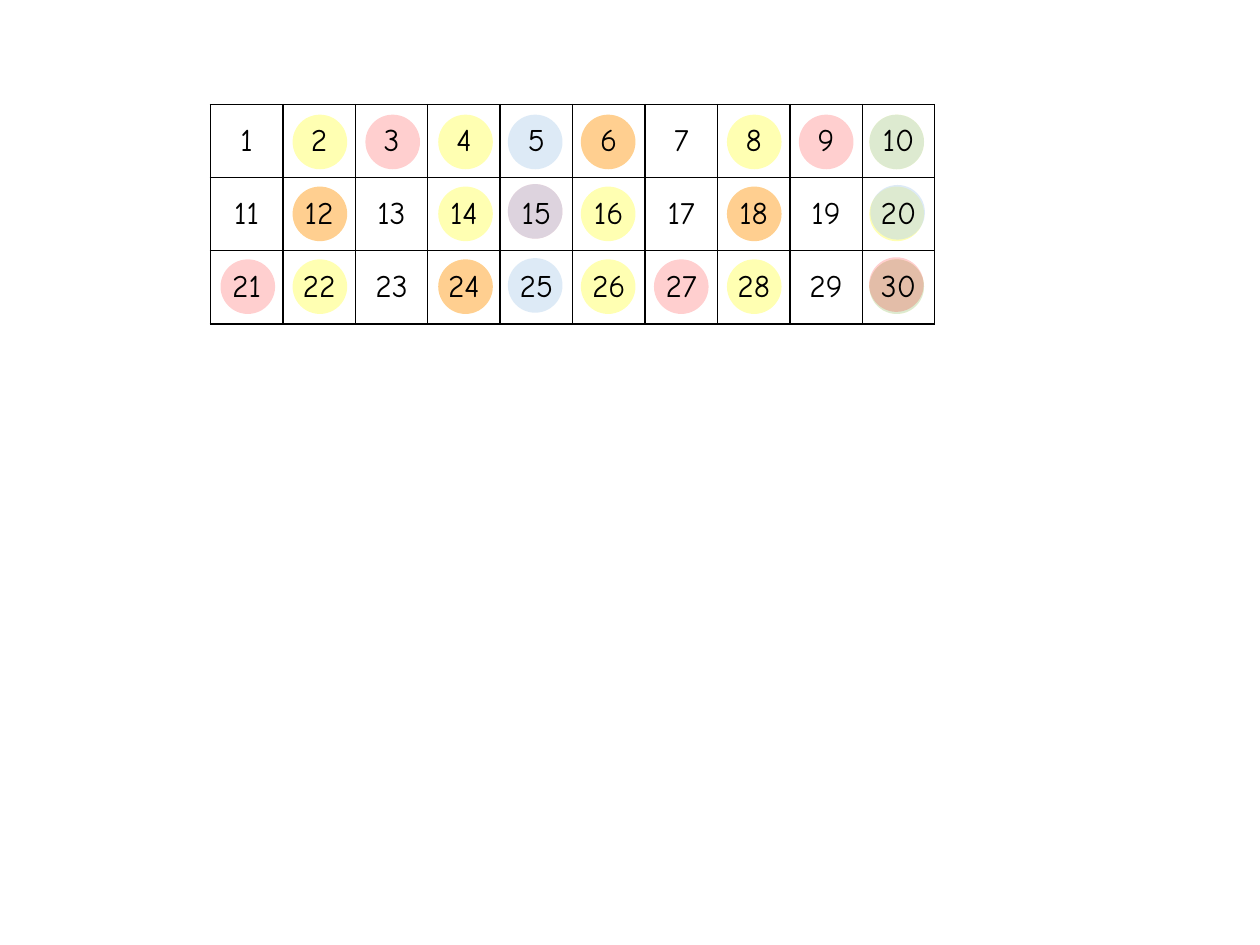
"""Build a slide that marks the multiples of 2, 3 and 5 on a number grid."""
from dataclasses import dataclass, field
from typing import Iterable

import pptx
import pptx.dml.color
import pptx.enum.shapes
import pptx.enum.text
import pptx.oxml
import pptx.oxml.ns
import pptx.util

Pt = pptx.util.Pt
COLUMNS, ROWS = 10, 3
TABLE_LEFT, TABLE_TOP = 120.24, 59.76
COLUMN_WIDTH, ROW_HEIGHT = 41.4, 41.76
CIRCLE_SIZE = 31.2
CIRCLE_LEFTS = (126, 167.2, 208.8, 250.4, 290.2, 331.9, 373.7, 415.4, 456.5, 496.8)
CIRCLE_TOPS = (65.5, 106.6, 148.2)
YELLOW, RED, BLUE, BLACK = "FFFF00", "FF0000", "BDD7EE", "000000"


@dataclass
class Layer:
    """Circles of one colour, with small shifts for some numbers."""
    color: str
    opacity: int
    numbers: Iterable[int]
    shifts: dict[int, tuple[float, float]] = field(default_factory=dict)


LAYERS = (
    Layer(YELLOW, 30, range(2, 31, 2)),
    Layer(RED, 19, range(3, 30, 3), {15: (0, -1.4)}),
    Layer(BLUE, 50, range(5, 31, 5), {15: (0, -1.4), 20: (0.5, -0.9), 25: (0, -0.7)}),
    Layer(RED, 19, (30,), {30: (-0.2, -1.2)}),
)


def rgb(color: str) -> pptx.dml.color.RGBColor:
    """Return the colour for a hex string."""
    return pptx.dml.color.RGBColor.from_string(color)


def draw_circle(slide, number: int, layer: Layer) -> None:
    """Draw a translucent circle behind a number."""
    row, column = divmod(number - 1, COLUMNS)
    shift_x, shift_y = layer.shifts.get(number, (0, 0))
    circle = slide.shapes.add_shape(
        pptx.enum.shapes.MSO_SHAPE.OVAL,
        Pt(CIRCLE_LEFTS[column] + shift_x), Pt(CIRCLE_TOPS[row] + shift_y),
        Pt(CIRCLE_SIZE), Pt(CIRCLE_SIZE),
    )
    circle.shadow.inherit = False
    circle.line.fill.background()
    circle.fill.solid()
    circle.fill.fore_color.rgb = rgb(layer.color)
    color_element = circle._element.spPr.find(".//" + pptx.oxml.ns.qn("a:srgbClr"))
    color_element.append(pptx.oxml.parse_xml(
        f'<a:alpha {pptx.oxml.ns.nsdecls("a")} val="{layer.opacity * 1000}"/>'
    ))


def format_cell(cell, number: int) -> None:
    """Write a number in a bordered, unfilled cell."""
    cell.margin_left = cell.margin_right = cell.margin_top = cell.margin_bottom = 0
    cell.vertical_anchor = pptx.enum.text.MSO_ANCHOR.MIDDLE
    cell.text_frame.text = str(number)
    paragraph = cell.text_frame.paragraphs[0]
    paragraph.alignment = pptx.enum.text.PP_ALIGN.CENTER
    font = paragraph.runs[0].font
    font.name = "Comic Neue"
    font.size = Pt(18)
    font.color.rgb = rgb(BLACK)
    for side in ("lnL", "lnR", "lnT", "lnB"):
        cell._tc.get_or_add_tcPr().append(pptx.oxml.parse_xml(
            f'<a:{side} {pptx.oxml.ns.nsdecls("a")} w="{Pt(1)}">'
            f'<a:solidFill><a:srgbClr val="{BLACK}"/></a:solidFill></a:{side}>'
        ))
    cell.fill.background()


def draw_grid(slide) -> None:
    """Draw the table of consecutive numbers."""
    table = slide.shapes.add_table(
        ROWS, COLUMNS, Pt(TABLE_LEFT), Pt(TABLE_TOP),
        Pt(COLUMN_WIDTH * COLUMNS), Pt(ROW_HEIGHT * ROWS),
    ).table
    table.first_row = table.horz_banding = False
    for column in table.columns:
        column.width = Pt(COLUMN_WIDTH)
    for row in table.rows:
        row.height = Pt(ROW_HEIGHT)
    for number, cell in enumerate(table.iter_cells(), start=1):
        format_cell(cell, number)


def main() -> None:
    """Create and save the presentation."""
    presentation = pptx.Presentation()
    presentation.slide_width, presentation.slide_height = Pt(720), Pt(540)
    slide = presentation.slides.add_slide(presentation.slide_layouts[6])
    for layer in LAYERS:
        for number in layer.numbers:
            draw_circle(slide, number, layer)
    draw_grid(slide)
    presentation.save("out.pptx")


if __name__ == "__main__":
    main()
